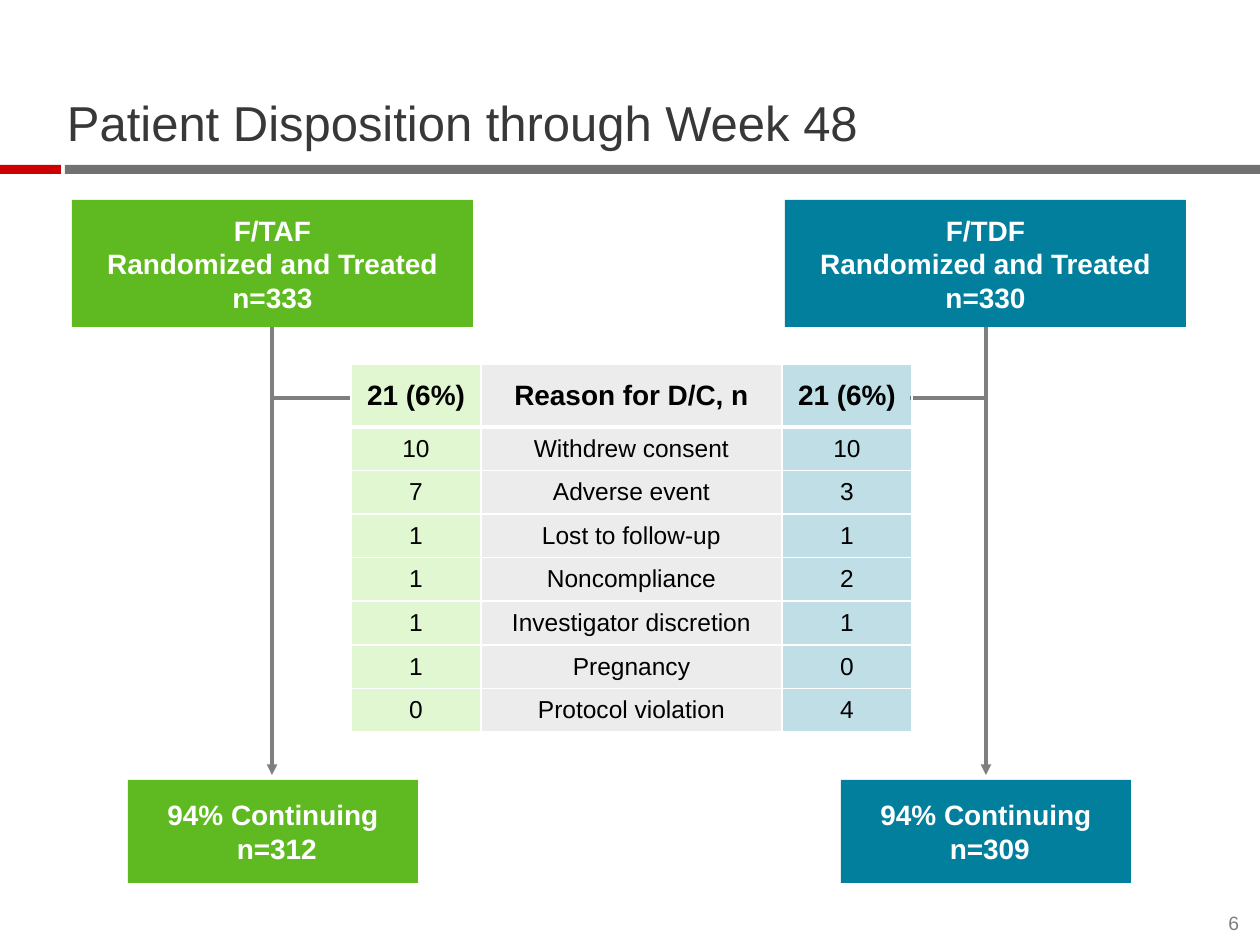
from lxml import etree
from pptx import Presentation
from pptx.dml.color import RGBColor
from pptx.enum.shapes import MSO_CONNECTOR, MSO_SHAPE
from pptx.enum.text import MSO_ANCHOR, PP_ALIGN
from pptx.oxml.ns import qn
from pptx.util import Pt

RECTANGLE = MSO_SHAPE.RECTANGLE
STRAIGHT = MSO_CONNECTOR.STRAIGHT
LEFT, CENTER, RIGHT = PP_ALIGN.LEFT, PP_ALIGN.CENTER, PP_ALIGN.RIGHT
MIDDLE, BOTTOM = MSO_ANCHOR.MIDDLE, MSO_ANCHOR.BOTTOM

WHITE = RGBColor(0xFF, 0xFF, 0xFF)
BLACK = RGBColor(0x00, 0x00, 0x00)
TITLE_GRAY = RGBColor(0x38, 0x38, 0x38)
RULE_GRAY = RGBColor(0x71, 0x71, 0x71)
LINE_GRAY = RGBColor(0x7F, 0x7F, 0x7F)
RED = RGBColor(0xCC, 0x00, 0x00)
GREEN = RGBColor(0x5E, 0xBA, 0x20)
PALE_GREEN = RGBColor(0xE0, 0xF7, 0xD1)
TEAL = RGBColor(0x02, 0x7F, 0x9C)
PALE_GRAY = RGBColor(0xEC, 0xEC, 0xEC)

FONT = "Arial"
PX_PER_INCH = 126
ARM_OFFSET = 713  # from the F/TAF arm to the F/TDF arm

ARMS = [
    (0, GREEN, "F/TAF", 333, 312),
    (ARM_OFFSET, TEAL, "F/TDF", 330, 309),
]
REASONS = [
    ("21 (6%)", "Reason for D/C, n", "21 (6%)"),
    ("10", "Withdrew consent", "10"),
    ("7", "Adverse event", "3"),
    ("1", "Lost to follow-up", "1"),
    ("1", "Noncompliance", "2"),
    ("1", "Investigator discretion", "1"),
    ("1", "Pregnancy", "0"),
    ("0", "Protocol violation", "4"),
]
COLUMN_WIDTHS = (130, 301, 130)
COLUMN_FILLS = ((PALE_GREEN, 100), (PALE_GRAY, 100), (TEAL, 25))
HEADER_HEIGHT, BODY_HEIGHT = 63, 305


def px(length):
    return round(length * 914400 / PX_PER_INCH)


def write_text(frame, text, size=16, color=BLACK, bold=False, align=CENTER,
               spacing=None):
    """Write one paragraph per line; a vertical tab breaks within one."""
    frame.text = text
    for para in frame.paragraphs:
        para.alignment = align
        if spacing:
            para.line_spacing = spacing
        for span in para.runs:
            span.font.name = FONT
            span.font.size = Pt(size)
            span.font.bold = bold
            span.font.color.rgb = color


def add_label(page, left, top, width, height, text, **text_format):
    box = page.shapes.add_textbox(px(left), px(top), px(width), px(height))
    frame = box.text_frame
    frame.word_wrap = True
    frame.vertical_anchor = BOTTOM
    frame.margin_left = frame.margin_right = 0
    frame.margin_top = frame.margin_bottom = 0
    write_text(frame, text, **text_format)


def add_box(page, left, top, width, height, fill, text=""):
    box = page.shapes.add_shape(
        RECTANGLE, px(left), px(top), px(width), px(height))
    box.shadow.inherit = False
    box.fill.solid()
    box.fill.fore_color.rgb = fill
    box.line.fill.background()
    if text:
        box.text_frame.word_wrap = False
        box.text_frame.vertical_anchor = MIDDLE
        write_text(box.text_frame, text, color=WHITE, bold=True)


def add_line(page, x1, y1, x2, y2, arrow=False):
    line = page.shapes.add_connector(
        STRAIGHT, px(x1), px(y1), px(x2), px(y2))
    line.line.color.rgb = LINE_GRAY
    line.line.width = Pt(2)
    if arrow:
        etree.SubElement(line.line._get_or_add_ln(), qn("a:tailEnd"),
                         type="triangle")
    etree.SubElement(line._element.spPr, qn("a:effectLst"))


def fill_cell(cell, color, opacity):
    cell.fill.solid()
    cell.fill.fore_color.rgb = color
    if opacity < 100:
        swatch = cell._tc.tcPr.find(".//" + qn("a:srgbClr"))
        etree.SubElement(swatch, qn("a:alpha"), val=str(opacity * 1000))


def set_borders(cell, widths):
    """Put white borders, keyed by side, ahead of the cell's fill."""
    properties = cell._tc.get_or_add_tcPr()
    for index, (side, width) in enumerate(widths.items()):
        border = etree.Element(qn(f"a:ln{side}"), w=str(Pt(width)))
        solid = etree.SubElement(border, qn("a:solidFill"))
        etree.SubElement(solid, qn("a:srgbClr"), val=str(WHITE))
        properties.insert(index, border)


def add_reason_table(page, left, top):
    row_count, column_count = len(REASONS), len(COLUMN_WIDTHS)
    frame = page.shapes.add_table(
        row_count, column_count, px(left), px(top),
        px(sum(COLUMN_WIDTHS)), px(HEADER_HEIGHT + BODY_HEIGHT))
    table = frame.table
    for column, width in zip(table.columns, COLUMN_WIDTHS):
        column.width = px(width)
    for row_index, texts in enumerate(REASONS):
        header = row_index == 0
        table.rows[row_index].height = (
            px(HEADER_HEIGHT) if header else px(BODY_HEIGHT) // (row_count - 1))
        for column_index, text in enumerate(texts):
            cell = table.cell(row_index, column_index)
            cell.vertical_anchor = MIDDLE
            cell.margin_left = cell.margin_right = 0
            cell.margin_top = cell.margin_bottom = px(5)
            write_text(cell.text_frame, text, size=16 if header else 14,
                       bold=header)
            fill_cell(cell, *COLUMN_FILLS[column_index])
            # Only inner edges are ruled, with a thick rule under the header
            borders = {}
            if column_index > 0:
                borders["L"] = 1
            if column_index < column_count - 1:
                borders["R"] = 1
            if not header:
                borders["T"] = 3 if row_index == 1 else 1
            if row_index < row_count - 1:
                borders["B"] = 3 if header else 1
            set_borders(cell, borders)


def main():
    deck = Presentation()
    deck.slide_width, deck.slide_height = px(1260), px(945)
    page = deck.slides.add_slide(deck.slide_layouts[6])

    # Title, rule and page number
    add_box(page, 65, 165, 1195, 9, RULE_GRAY)
    add_box(page, 0, 165, 61, 9, RED)
    add_label(page, 67, 59, 1134, 93, "Patient Disposition through Week 48",
              size=28, color=TITLE_GRAY, align=LEFT, spacing=0.9)
    add_label(page, 1205, 911, 34, 23, "6", size=11, color=LINE_GRAY,
              align=RIGHT)

    # Treatment arms
    for offset, fill, drug, treated, continuing in ARMS:
        center = 272 + offset + (1 if offset else 0)
        add_line(page, center, 321, center, 775, arrow=True)
        add_box(page, 72 + offset, 200, 401, 127, fill,
                f"{drug}\nRandomized and Treated\nn={treated}")
        add_box(page, 128 + offset, 780, 290, 103, fill,
                f"94% Continuing\v n={continuing}")

    # Discontinuations
    add_line(page, 272, 398, 370, 398)
    add_line(page, 910, 398, 988, 398)
    add_reason_table(page, 351, 364)

    deck.save("out.pptx")


if __name__ == "__main__":
    main()
